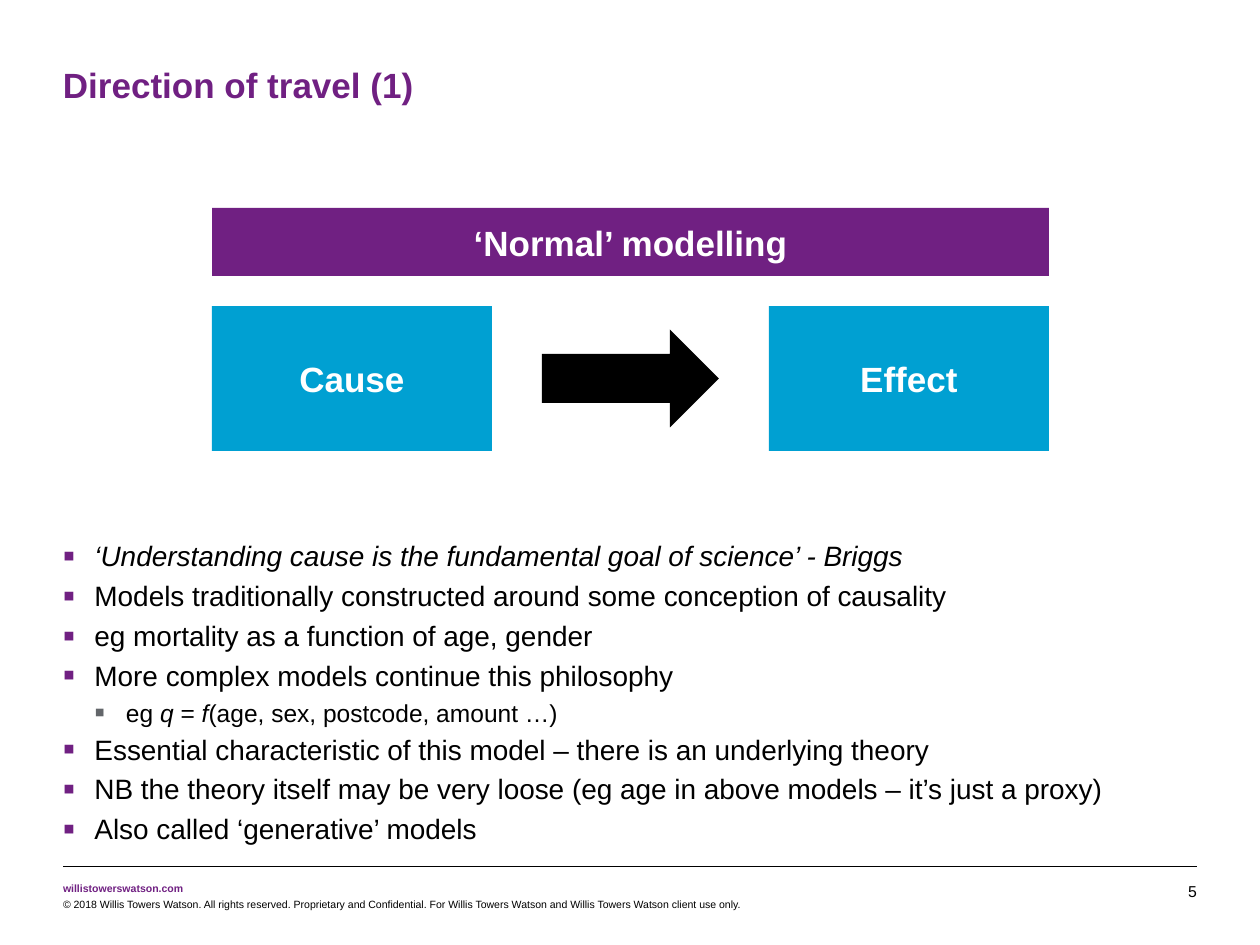
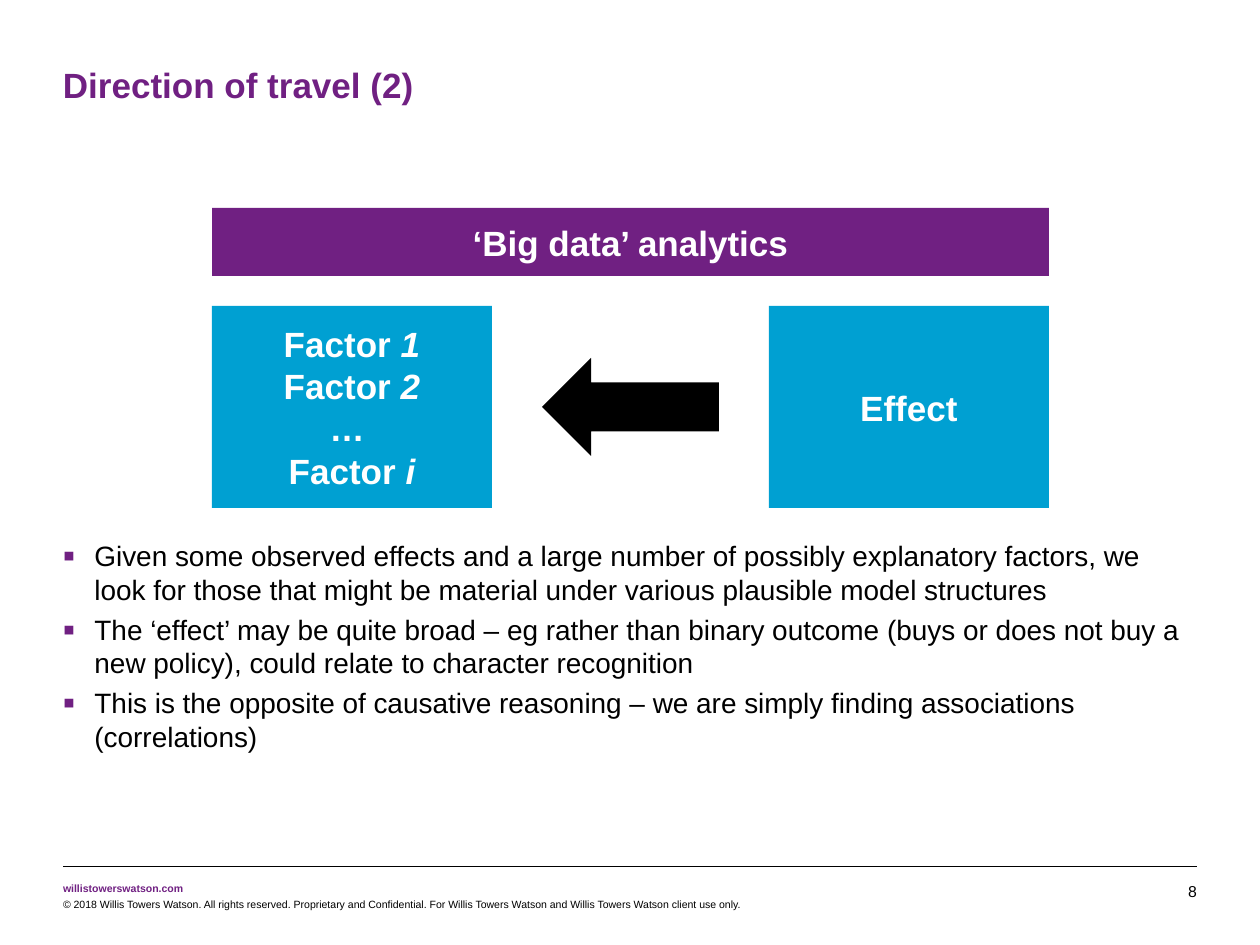
"""Builds two slides comparing the direction of travel in causal modelling and big data analytics."""
from lxml.etree import SubElement
from pptx import Presentation
from pptx.dml.color import RGBColor
from pptx.enum.shapes import MSO_CONNECTOR, MSO_SHAPE
from pptx.enum.text import MSO_ANCHOR, PP_ALIGN
from pptx.oxml.ns import qn
from pptx.util import Emu, Pt

PURPLE = RGBColor(0x70, 0x20, 0x82)
BLUE = RGBColor(0x00, 0xA0, 0xD2)
GREY = RGBColor(0x63, 0x66, 0x6A)
BLACK = RGBColor(0, 0, 0)
WHITE = RGBColor(0xFF, 0xFF, 0xFF)
FONT = "Arial"
ITALIC = True

WEBSITE = "willistowerswatson.com"
COPYRIGHT = ("© 2018 Willis Towers Watson. All rights reserved. Proprietary and Confidential. "
             "For Willis Towers Watson and Willis Towers Watson client use only.")

SLIDES = [
    {
        "title": "Direction of travel (1)",
        "number": "5",
        "heading": "‘Normal’ modelling",
        "left": [["Cause"]],
        "right": [["Effect"]],
        "box_height": 145,
        "arrow_rotation": 0,
        "bullets": [
            (0, [("‘Understanding cause is the fundamental goal of science’ - Briggs", ITALIC)]),
            (0, ["Models traditionally constructed around some conception of causality"]),
            (0, ["eg mortality as a function of age, gender"]),
            (0, ["More complex models continue this philosophy"]),
            (1, ["eg ", ("q", ITALIC), " = ", ("f", ITALIC), "(age, sex, postcode, amount …)"]),
            (0, ["Essential characteristic of this model – there is an underlying theory"]),
            (0, ["NB the theory itself may be very loose (eg age in above models – it’s just a proxy)"]),
            (0, ["Also called ‘generative’ models"]),
        ],
    },
    {
        "title": "Direction of travel (2)",
        "number": "8",
        "heading": "‘Big data’ analytics",
        "left": [["Factor ", ("1", ITALIC)], ["Factor ", ("2", ITALIC)], ["… "],
                 ["Factor ", ("i", ITALIC)]],
        "right": [["Effect"]],
        "box_height": 202,
        "arrow_rotation": 180,
        "bullets": [
            (0, ["Given some observed effects and a large number of possibly explanatory factors, "
                 "we look for those that might be material under various plausible model structures"]),
            (0, ["The ‘effect’ may be quite broad – eg rather than binary outcome (buys or does "
                 "not buy a new policy), could relate to character recognition"]),
            (0, ["This is the opposite of causative reasoning – we are simply finding "
                 "associations (correlations)"]),
        ],
    },
]

PX = 914400 / 126
SLIDE_W, SLIDE_H = 1260, 945
MARGIN = 63
CONTENT_W = SLIDE_W - 2 * MARGIN
RULE_Y = 866
DIAGRAM_X, DIAGRAM_W = 212, 837
HEADING_Y, HEADING_H = 208, 68
BOX_Y, BOX_W = 306, 280
ARROW_W, ARROW_H = 177, 98
INDENT = 31.5
BULLET_LEVELS = [(16, 3.5, PURPLE), (14, 2.8, GREY)]


def px(*lengths):
    return [Emu(round(length * PX)) for length in lengths]


def add_runs(paragraph, runs, size, color, bold=False):
    for item in runs:
        text, italic = (item, False) if isinstance(item, str) else item
        run = paragraph.add_run()
        run.text = text
        font = run.font
        font.name, font.size, font.bold, font.italic = FONT, Pt(size), bold, italic
        font.color.rgb = color


def paragraphs_of(frame, count):
    return [frame.paragraphs[0]] + [frame.add_paragraph() for _ in range(count - 1)]


def add_frame(slide, x, y, w, h, wrap=True):
    frame = slide.shapes.add_textbox(*px(x, y, w, h)).text_frame
    frame.margin_left = frame.margin_right = frame.margin_top = frame.margin_bottom = 0
    frame.word_wrap = wrap
    return frame


def add_line_of_text(slide, text, x, y, w, h, size, color, bold=False, wrap=True):
    frame = add_frame(slide, x, y, w, h, wrap)
    add_runs(frame.paragraphs[0], [text], size, color, bold)
    return frame


def add_block(slide, preset, x, y, w, h, color, lines=()):
    block = slide.shapes.add_shape(preset, *px(x, y, w, h))
    block.shadow.inherit = False
    block.fill.solid()
    block.fill.fore_color.rgb = color
    block.line.fill.background()
    if lines:
        frame = block.text_frame
        frame.word_wrap = True
        frame.vertical_anchor = MSO_ANCHOR.MIDDLE
        for paragraph, runs in zip(paragraphs_of(frame, len(lines)), lines):
            paragraph.alignment = PP_ALIGN.CENTER
            add_runs(paragraph, runs, 20, WHITE, bold=True)
    return block


def add_bullets(slide, bullets):
    frame = add_frame(slide, MARGIN, 539, CONTENT_W, 313)
    for paragraph, (level, runs) in zip(paragraphs_of(frame, len(bullets)), bullets):
        size, space_after, mark_color = BULLET_LEVELS[level]
        paragraph.level = level
        paragraph.space_after = Pt(space_after)
        props = paragraph._p.get_or_add_pPr()
        indent, = px(INDENT)
        props.set("marL", str(indent * (level + 1)))
        props.set("indent", str(-indent))
        SubElement(SubElement(props, qn("a:buClr")), qn("a:srgbClr"), val=str(mark_color))
        SubElement(props, qn("a:buSzPct"), val="125000")
        SubElement(props, qn("a:buFont"), typeface=FONT)
        SubElement(props, qn("a:buChar"), char="▪")
        add_runs(paragraph, runs, size, BLACK)


def add_diagram(slide, content):
    box_h = content["box_height"]
    right_x = DIAGRAM_X + DIAGRAM_W - BOX_W
    for x, side in ((DIAGRAM_X, "left"), (right_x, "right")):
        add_block(slide, MSO_SHAPE.RECTANGLE, x, BOX_Y, BOX_W, box_h, BLUE, content[side])
    arrow = add_block(slide, MSO_SHAPE.RIGHT_ARROW, DIAGRAM_X + (DIAGRAM_W - ARROW_W) / 2,
                      BOX_Y + (box_h - ARROW_H) / 2, ARROW_W, ARROW_H, BLACK)
    arrow.rotation = content["arrow_rotation"]
    add_block(slide, MSO_SHAPE.RECTANGLE, DIAGRAM_X, HEADING_Y, DIAGRAM_W, HEADING_H,
              PURPLE, [[content["heading"]]])


def add_footer(slide, number):
    rule = slide.shapes.add_connector(
        MSO_CONNECTOR.STRAIGHT, *px(MARGIN, RULE_Y, MARGIN + CONTENT_W, RULE_Y))
    rule.line.color.rgb = BLACK
    rule.line.width = Pt(0.25)
    SubElement(rule._element.spPr, qn("a:effectLst"))
    add_line_of_text(slide, WEBSITE, MARGIN, 882, 121, 13, 6, PURPLE, bold=True, wrap=False)
    add_line_of_text(slide, COPYRIGHT, MARGIN, 898, 727, 13, 6, BLACK)
    page = add_line_of_text(slide, number, 1144, 882, 53, 19, 9, BLACK)
    page.vertical_anchor = MSO_ANCHOR.BOTTOM
    page.paragraphs[0].alignment = PP_ALIGN.RIGHT


def main():
    deck = Presentation()
    deck.slide_width, deck.slide_height = px(SLIDE_W, SLIDE_H)
    for content in SLIDES:
        slide = deck.slides.add_slide(deck.slide_layouts[6])
        add_line_of_text(slide, content["title"], MARGIN, MARGIN, CONTENT_W, 43, 20, PURPLE, bold=True)
        add_footer(slide, content["number"])
        add_bullets(slide, content["bullets"])
        add_diagram(slide, content)
    deck.save("out.pptx")


if __name__ == "__main__":
    main()
